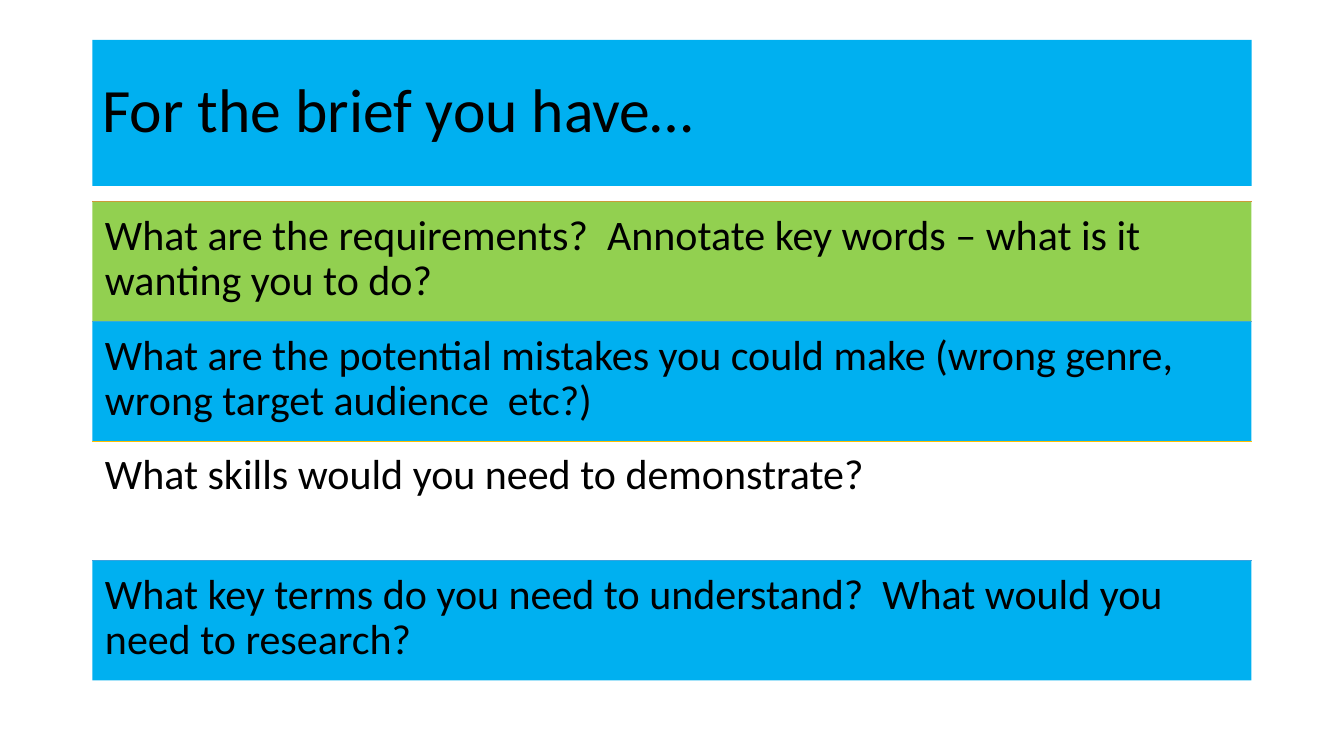
from lxml import etree
from pptx import Presentation
from pptx.dml.color import RGBColor
from pptx.enum.shapes import MSO_CONNECTOR as CONN, MSO_SHAPE as SHAPE
from pptx.enum.text import MSO_ANCHOR as ANCHOR, PP_ALIGN as ALIGN
from pptx.oxml.ns import qn
from pptx.util import Pt

PX = 9525
COLORS = {"blue": "00B0F0", "green": "92D050", "black": "000000",
          "orange": "ED7D31", "grey": "A5A5A5", "gold": "FFC000", "sky": "5B9BD5"}
LEFT, WIDTH = 88 * PX, 1104 * PX
ROW_TOP, ROW_HEIGHT = 192 * PX, 114 * PX
INSET = 12 * PX

# question, band fill, colour of the rule above it
QUESTIONS = [
    ("What are the requirements?  Annotate key words – what is it wanting you to do?",
     "green", "orange"),
    ("What are the potential mistakes you could make (wrong genre, wrong target audience  etc?)",
     "blue", "grey"),
    ("What skills would you need to demonstrate?", None, "gold"),
    ("What key terms do you need to understand?  What would you need to research?",
     "blue", "sky"),
]


def rgb(name):
    return RGBColor.from_string(COLORS[name])


def write(sp, text, size, frame_format):
    """Fill the shape with one left-aligned black paragraph."""
    tf = sp.text_frame
    for key, value in frame_format.items():
        setattr(tf, key, value)
    p = tf.paragraphs[0]
    p.alignment, p.line_spacing = ALIGN.LEFT, 0.9
    r = p.add_run()
    r.text = text
    r.font.name, r.font.size = "Calibri", Pt(size)
    r.font.color.rgb = rgb("black")


prs = Presentation()
prs.slide_width, prs.slide_height = 1280 * PX, 720 * PX
s = prs.slides.add_slide(prs.slide_layouts[5])

title = s.shapes.title
title.left, title.top, title.width, title.height = LEFT, 38 * PX, WIDTH, 139 * PX
title.fill.solid()
title.fill.fore_color.rgb = rgb("blue")
write(title, "For the brief you have…", 44,
      {"word_wrap": True, "vertical_anchor": ANCHOR.MIDDLE})

row_format = {"word_wrap": True, "vertical_anchor": ANCHOR.TOP,
              "margin_left": INSET, "margin_right": INSET,
              "margin_top": INSET, "margin_bottom": INSET}
for i, (question, fill, rule_color) in enumerate(QUESTIONS):
    top = ROW_TOP + i * ROW_HEIGHT
    rule = s.shapes.add_connector(CONN.STRAIGHT, LEFT, top, LEFT + WIDTH, top)
    rule.line.color.rgb = rgb(rule_color)
    rule.line.width = Pt(0.5)
    etree.SubElement(rule._element.spPr, qn("a:effectLst"))

    band = s.shapes.add_shape(SHAPE.RECTANGLE, LEFT, top, WIDTH, ROW_HEIGHT)
    band.shadow.inherit = False
    band.line.fill.background()
    if fill:
        band.fill.solid()
        band.fill.fore_color.rgb = rgb(fill)
    else:
        band.fill.background()
    write(band, question, 30, row_format)

prs.save("out.pptx")
